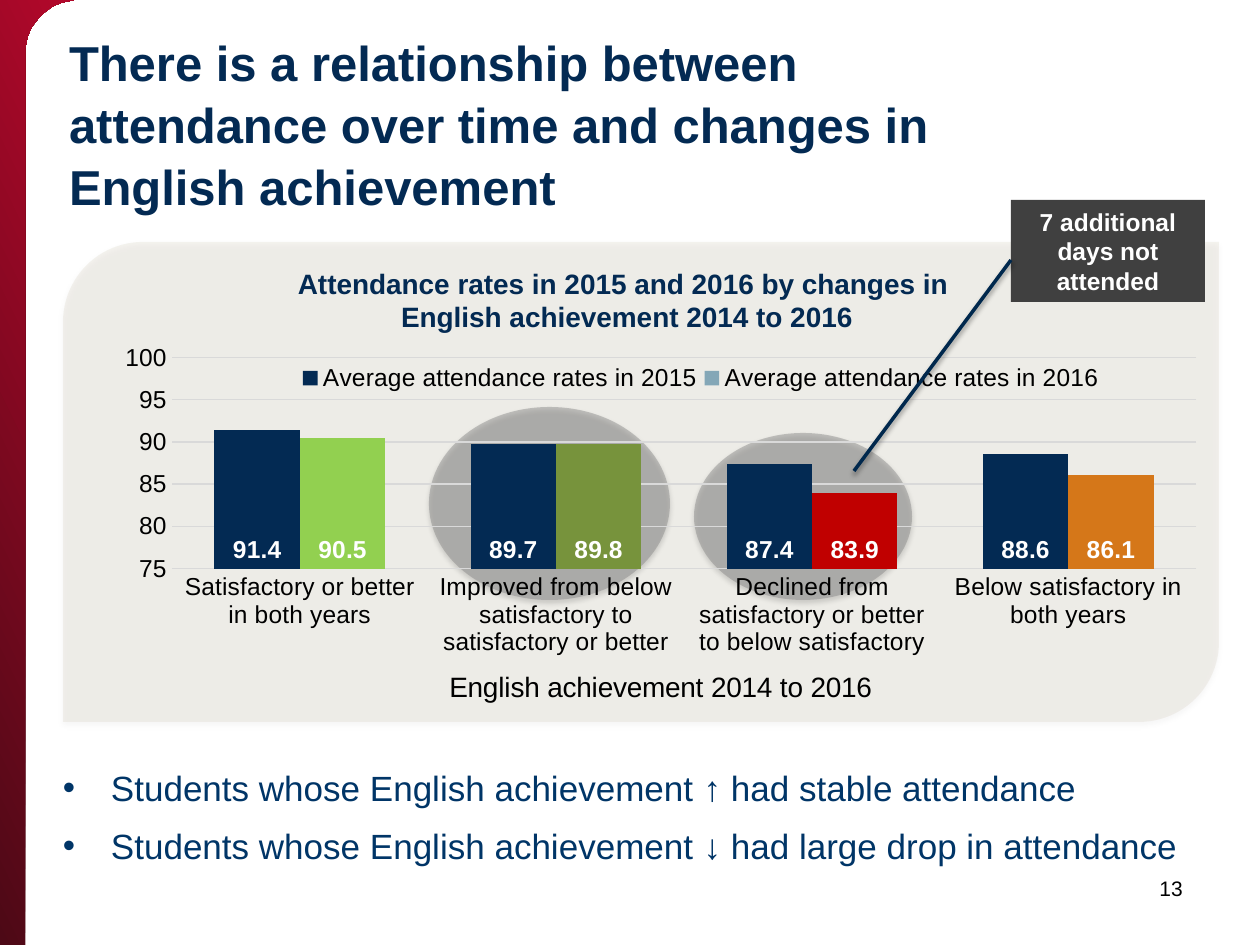
import math
from lxml import etree
from pptx import Presentation
from pptx import util as u
from pptx.chart import data as cd
from pptx.dml.color import RGBColor
from pptx.enum import chart as ce, shapes, text
from pptx.oxml import parse_xml
from pptx.oxml.ns import nsdecls, qn

PX = 914400 // 126
NAVY, BLUE, WHITE, BLACK, GRID = "032A53", "003567", "FFFFFF", "000000", "D9D9D9"
rgb = RGBColor.from_string


def write(p, words, size, color, bold=False, align=None):
    """Add runs to a paragraph, with a line break at each newline."""
    p.alignment = align
    for i, line in enumerate(words.split("\n")):
        if i:
            p.add_line_break()
        r = p.add_run()
        r.text = line
        f = r.font
        f.name, f.size, f.bold = "Arial", u.Pt(size), bold
        f.color.rgb = rgb(color)


def drop_shadow(s, alpha):
    spPr = s._element.spPr
    for old in spPr.findall(qn("a:effectLst")):
        spPr.remove(old)
    spPr.append(parse_xml(
        f'<a:effectLst {nsdecls("a")}><a:outerShdw blurRad="{u.Pt(3.1)}" dist="{u.Pt(1.8)}" '
        f'dir="5400000" rotWithShape="0"><a:srgbClr val="000000"><a:alpha val="{alpha * 1000}"/>'
        '</a:srgbClr></a:outerShdw></a:effectLst>'))


prs = Presentation()
prs.slide_width, prs.slide_height = 1260 * PX, 945 * PX
s = prs.slides.add_slide(prs.slide_layouts[5])

# Side band with a rounded inner corner
corner = [(79 - 54 * math.sin(math.radians(a)), 54 - 54 * math.cos(math.radians(a)))
          for a in range(0, 91, 5)]
fb = s.shapes.build_freeform(0, 0, scale=PX)
fb.add_line_segments(corner + [(25, 945), (0, 945)], close=True)
band = fb.convert_to_shape()
band.shadow.inherit = False
band.line.fill.background()
band.fill.gradient()
band.fill.gradient_angle = 26
for stop, color in zip(band.fill.gradient_stops, ("4D0916", "B4082B")):
    stop.color.rgb = rgb(color)

# Title
title = s.shapes.title
title.left, title.top, title.width, title.height = [v * PX for v in (69, 30, 942, 123)]
tf = title.text_frame
tf.margin_left = tf.margin_top = tf.margin_right = tf.margin_bottom = 0
tf.auto_size, tf.word_wrap = text.MSO_AUTO_SIZE.NONE, True
tf.vertical_anchor = text.MSO_ANCHOR.TOP
tf.paragraphs[0].line_spacing = 1.05
write(tf.paragraphs[0], "There is a relationship between attendance over time and changes in "
      "English achievement", 28, NAVY, True, text.PP_ALIGN.LEFT)

# Panel and highlight ellipses, all translucent
G = shapes.MSO_SHAPE
for kind, box, color, alpha in (
        (G.ROUND_2_DIAG_RECTANGLE, (63, 242, 1156, 480), "A39468", 10),
        (G.OVAL, (694, 433, 218, 167), "808080", 42),
        (G.OVAL, (429, 407, 241, 193), "808080", 42)):
    sp = s.shapes.add_shape(kind, *[v * PX for v in box])
    sp.fill.solid()
    sp.fill.fore_color.rgb = rgb(color)
    etree.SubElement(sp.fill._xPr.find(".//" + qn("a:srgbClr")), qn("a:alpha"),
                     val=str(alpha * 1000))
    sp.line.fill.background()
    drop_shadow(sp, 35)

# Chart heading and page number
for box, words, size, color, bold, align in (
        ((223, 260, 808, 81), "Attendance rates in 2015 and 2016 by changes in \n"
         "English achievement 2014 to 2016", 16, NAVY, True, text.PP_ALIGN.CENTER),
        ((1147, 869, 57, 38), "13", 12, BLACK, False, text.PP_ALIGN.LEFT)):
    tf = s.shapes.add_textbox(*[v * PX for v in box]).text_frame
    tf.word_wrap = True
    write(tf.paragraphs[0], words, size, color, bold, align)

# Chart
data = cd.CategoryChartData(number_format="0.0")
data.categories = ["Satisfactory or better in both years",
                   "Improved from below satisfactory to satisfactory or better",
                   "Declined from satisfactory or better to below satisfactory",
                   "Below satisfactory in both years"]
data.add_series("Average attendance rates in 2015", (91.4, 89.7, 87.4, 88.6))
data.add_series("Average attendance rates in 2016", (90.5, 89.8, 83.9, 86.1))
chart = s.shapes.add_chart(ce.XL_CHART_TYPE.COLUMN_CLUSTERED,
                           *[v * PX for v in (93, 252, 1126, 459)], data).chart
chart.has_title = False
chart.font.name, chart.font.size = "Arial", u.Pt(14)
chart.font.color.rgb = rgb(BLACK)
chart.has_legend = True
chart.legend.position = ce.XL_LEGEND_POSITION.TOP
chart.legend.include_in_layout = False

plot = chart.plots[0]
plot.gap_width, plot.overlap, plot.vary_by_categories = 100, 0, False
for series, color in zip(plot.series, (NAVY, "84A7B7")):
    series.format.fill.solid()
    series.format.fill.fore_color.rgb = rgb(color)
    labels = series.data_labels
    labels.show_value = True
    labels.position = ce.XL_LABEL_POSITION.INSIDE_BASE
    labels.number_format, labels.number_format_is_linked = "0.0", False
    f = labels.font
    f.name, f.size, f.bold = "Arial", u.Pt(14), True
    f.color.rgb = rgb(WHITE)
for i, color in enumerate(("92D050", "77933C", "C00000", "D57719")):
    fill = plot.series[1].points[i].format.fill
    fill.solid()
    fill.fore_color.rgb = rgb(color)

cat, val = chart.category_axis, chart.value_axis
for axis in (cat, val):
    axis.major_tick_mark = axis.minor_tick_mark = ce.XL_TICK_MARK.NONE
write(cat.axis_title.text_frame.paragraphs[0], "English achievement 2014 to 2016", 16, BLACK)
val.minimum_scale, val.maximum_scale, val.major_unit = 75, 100, 5
val.tick_labels.number_format, val.tick_labels.number_format_is_linked = "0", False
val.format.line.fill.background()
for line in (cat.format.line, val.major_gridlines.format.line):
    line.color.rgb = rgb(GRID)
    line.width = u.Pt(0.75)

# Fixed places for plot and legend, clear backgrounds
space = chart._chartSpace
area = space.chart.plotArea
for parent, index, target, place in (
        (area, 0, '<c:layoutTarget val="inner"/>', (0.07, 0.23, 0.91, 0.46)),
        (chart.legend._element, 1, "", (0.18, 0.24, 0.72, 0.07))):
    for old in parent.findall(qn("c:layout")):
        parent.remove(old)
    parts = "".join(f'<c:{n} val="{v}"/>' for n, v in zip("xywh", place))
    parent.insert(index, parse_xml(
        f'<c:layout {nsdecls("c")}><c:manualLayout>{target}<c:xMode val="edge"/>'
        f'<c:yMode val="edge"/>{parts}</c:manualLayout></c:layout>'))
clear = f'<c:spPr {nsdecls("c", "a")}><a:noFill/><a:ln><a:noFill/></a:ln></c:spPr>'
area.append(parse_xml(clear))
space.chart.addnext(parse_xml(clear))

# Findings
tf = s.shapes.add_textbox(*[v * PX for v in (63, 764, 1134, 181)]).text_frame
tf.margin_left = tf.margin_top = tf.margin_right = tf.margin_bottom = 0
tf.word_wrap = True
for i, (arrow, finding) in enumerate((("↑ ", "had stable attendance"),
                                      ("↓ ", "had large drop in attendance"))):
    p = tf.add_paragraph() if i else tf.paragraphs[0]
    pPr = p._p.get_or_add_pPr()
    pPr.set("marL", str(48 * PX))
    pPr.set("indent", str(-48 * PX))
    etree.SubElement(pPr, qn("a:buFont"), typeface="Arial")
    etree.SubElement(pPr, qn("a:buChar"), char="•")
    p.line_spacing, p.space_after = 1.05, u.Pt(4)
    if i:
        p.space_before = u.Pt(4)
    for words, bold in (("Students whose English achievement ", False), (arrow, True),
                        (finding, False)):
        write(p, words, 20, BLUE, bold)

# Callout and its pointer
callout = s.shapes.add_shape(G.RECTANGLE, *[v * PX for v in (1011, 200, 194, 102)])
callout.shadow.inherit = False
callout.fill.solid()
callout.fill.fore_color.rgb = rgb("404040")
callout.line.fill.background()
tf = callout.text_frame
tf.word_wrap = True
write(tf.paragraphs[0], "7 additional days not attended", 14, WHITE, True, text.PP_ALIGN.CENTER)

pointer = s.shapes.add_connector(shapes.MSO_CONNECTOR.STRAIGHT,
                                 *[v * PX for v in (1011, 260, 854, 471)])
pointer.line.color.rgb = rgb("00284D")
pointer.line.width = u.Pt(2)
drop_shadow(pointer, 38)

prs.save("out.pptx")
